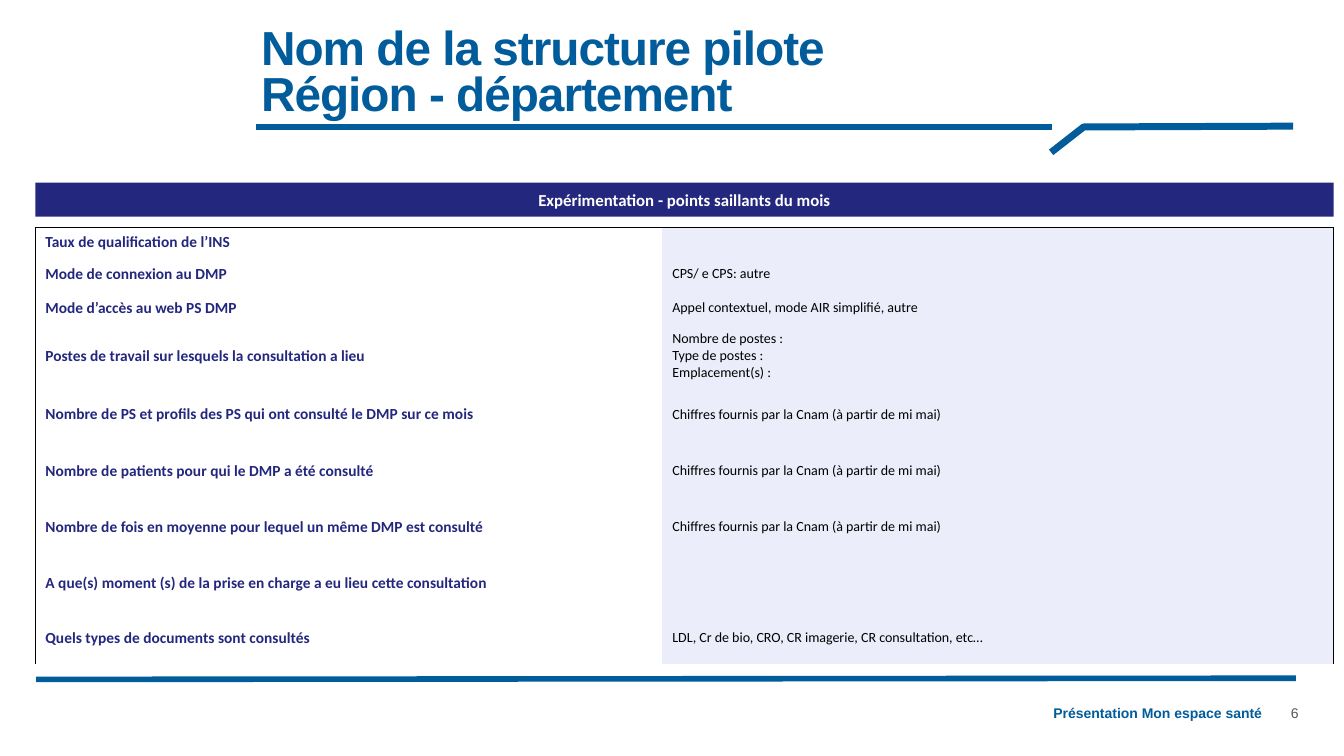
from dataclasses import dataclass

from lxml import etree
from pptx import Presentation
from pptx import util as u
from pptx.dml.color import RGBColor
from pptx.enum import shapes, text
from pptx.oxml import ns

HUES = {"blue": "005C9B", "navy": "23277E", "pale": "ECEDFA",
        "white": "FFFFFF", "black": "000000", "grey": "575757"}
PLAIN = "{2D5ABB26-0587-4C30-8999-92F81FD0307C}"  # table style without grid

# Format values: font attributes plus a colour name
TITLE = {"name": "Arial", "size": u.Pt(34.1), "bold": True, "hue": "blue"}
FOOT = {"name": "Arial", "size": u.Pt(10), "bold": True, "hue": "blue"}
PAGE = {"name": "Arial", "size": u.Pt(10), "bold": False, "hue": "grey"}
HEAD = {"name": "Calibri", "size": u.Pt(12), "bold": True, "hue": "white"}
LABEL = {"name": "Calibri", "size": u.Pt(11), "bold": True, "hue": "navy"}
VALUE = {"name": "Calibri", "size": u.Pt(10), "bold": False, "hue": "black"}


@dataclass
class Box:
    words: str
    left: float
    top: float
    width: float
    height: float
    style: dict
    align: text.PP_ALIGN = text.PP_ALIGN.LEFT
    anchor: text.MSO_ANCHOR = text.MSO_ANCHOR.TOP
    pad: float = 0.13
    side: float = 0.13
    gap: float = 1.0
    track: int = 0

    def place(self) -> list:
        return [u.Cm(n) for n in (self.left, self.top, self.width, self.height)]


@dataclass
class Rule:
    start: tuple
    end: tuple
    weight: float


@dataclass
class Row:
    label: str
    value: str
    height: float


def rgb(hue: str) -> RGBColor:
    return RGBColor.from_string(HUES[hue])


def style_font(font, style: dict) -> None:
    for key, val in style.items():
        if key == "hue":
            font.color.rgb = rgb(val)
        else:
            setattr(font, key, val)


def fill_text(frame, box: Box) -> None:
    props = {"word_wrap": True, "vertical_anchor": box.anchor,
             "margin_left": u.Cm(box.side), "margin_right": u.Cm(box.side),
             "margin_top": u.Cm(box.pad), "margin_bottom": u.Cm(box.pad)}
    for key, val in props.items():
        setattr(frame, key, val)
    para = frame.paragraphs[0]
    para.text = box.words
    para.alignment, para.line_spacing = box.align, box.gap
    for run in para.runs:
        style_font(run.font, box.style)
        if box.track:
            run._r.get_or_add_rPr().set("spc", str(box.track))


def draw_box(slide, box: Box) -> None:
    fill_text(slide.shapes.add_textbox(*box.place()).text_frame, box)


def draw_band(slide, box: Box) -> None:
    band = slide.shapes.add_shape(shapes.MSO_SHAPE.RECTANGLE, *box.place())
    band.shadow.inherit = False
    band.fill.solid()
    band.fill.fore_color.rgb = rgb("navy")
    band.line.fill.background()
    fill_text(band.text_frame, box)


def style_line(line, weight: float) -> None:
    line.color.rgb = rgb("blue")
    line.width = u.Pt(weight)


def draw_rule(slide, rule: Rule) -> None:
    ends = [u.Cm(n) for n in rule.start + rule.end]
    line = slide.shapes.add_connector(shapes.MSO_CONNECTOR.STRAIGHT, *ends)
    style_line(line.line, rule.weight)
    etree.SubElement(line._element.spPr, ns.qn("a:effectLst"))


def draw_bend(slide, points: list, weight: float) -> None:
    spots = [(u.Cm(x), u.Cm(y)) for x, y in points]
    path = slide.shapes.build_freeform(*spots[0])
    path.add_line_segments(spots[1:], close=False)
    bend = path.convert_to_shape()
    bend.shadow.inherit = False
    bend.fill.background()
    style_line(bend.line, weight)


def add_edge(cell, side: str) -> None:
    edge = etree.SubElement(cell._tc.get_or_add_tcPr(), ns.qn("a:ln" + side), w="12700")
    fill = etree.SubElement(edge, ns.qn("a:solidFill"))
    etree.SubElement(fill, ns.qn("a:srgbClr"), val=HUES["black"])


def fill_cell(cell, words: str, style: dict, sides: str) -> None:
    for side in sides:
        add_edge(cell, side)
    cell.vertical_anchor = text.MSO_ANCHOR.MIDDLE
    cell.text = words
    for para in cell.text_frame.paragraphs:
        for run in para.runs:
            style_font(run.font, style)
        if not words:  # keeps an empty row low
            etree.SubElement(para._p, ns.qn("a:endParaRPr"), sz="1000")


def draw_table(slide, rows: list, left: float, top: float, cols: tuple) -> None:
    total = sum(row.height for row in rows)
    frame = slide.shapes.add_table(len(rows), len(cols), u.Cm(left), u.Cm(top),
                                   u.Cm(sum(cols)), u.Cm(total))
    table = frame.table
    table.first_row = table.horz_banding = False
    table._tbl.tblPr.find(ns.qn("a:tableStyleId")).text = PLAIN
    for col, width in zip(table.columns, cols):
        col.width = u.Cm(width)
    for i, row in enumerate(rows):
        table.rows[i].height = u.Cm(row.height)
        lid = "" if i else "T"
        name, value = table.cell(i, 0), table.cell(i, 1)
        fill_cell(name, row.label, LABEL, "L" + lid)
        fill_cell(value, row.value, VALUE, "R" + lid)
        name.fill.background()
        value.fill.solid()
        value.fill.fore_color.rgb = rgb("pale")


CNAM = "Chiffres fournis par la Cnam (à partir de mi mai)"
ROWS = [
    Row("Taux de qualification de l’INS", "", 0.69),
    Row("Mode de connexion au DMP", "CPS/ e CPS: autre", 0.86),
    Row("Mode d’accès au web PS DMP", "Appel contextuel, mode AIR simplifié, autre", 0.86),
    Row("Postes de travail sur lesquels la consultation a lieu",
        "Nombre de postes :\nType de postes :\nEmplacement(s) :", 1.42),
    Row("Nombre de PS et profils des PS qui ont consulté le DMP sur ce mois", CNAM, 1.42),
    Row("Nombre de patients pour qui le DMP a été consulté", CNAM, 1.42),
    Row("Nombre de fois en moyenne pour lequel un même DMP est consulté", CNAM, 1.42),
    Row("A que(s) moment (s) de la prise en charge a eu lieu cette consultation", "", 1.42),
    Row("Quels types de documents sont consultés",
        "LDL, Cr de bio, CRO, CR imagerie, CR consultation, etc…", 1.32),
]
RULES = [Rule((6.45, 3.2), (26.52, 3.2), 5), Rule((0.91, 17.12), (32.66, 17.09), 4)]
BEND = [(26.49, 3.84), (27.31, 3.2), (32.59, 3.18)]
BAND = Box("Expérimentation - points saillants du mois", 0.89, 4.6, 32.72, 0.86, HEAD,
           text.PP_ALIGN.CENTER, text.MSO_ANCHOR.MIDDLE)
BOXES = [
    Box("Présentation Mon espace santé", 21.54, 17.63, 10.39, 0.89, FOOT,
        text.PP_ALIGN.RIGHT),
    Box("Nom de la structure pilote\vRégion - département", 6.43, 0.05, 17.3, 3.15, TITLE,
        anchor=text.MSO_ANCHOR.BOTTOM, pad=0.15, side=0.15, gap=0.8, track=-70),
    Box("6", 32.28, 17.63, 1.3, 0.66, PAGE, side=0.25),
]


def main() -> None:
    deck = Presentation()
    deck.slide_width, deck.slide_height = u.Cm(33.87), u.Cm(19.05)
    slide = deck.slides.add_slide(deck.slide_layouts[6])

    # Rules above and below the content
    for rule in RULES:
        draw_rule(slide, rule)
    draw_bend(slide, BEND, 5)

    # Band and table
    draw_band(slide, BAND)
    draw_table(slide, ROWS, 0.89, 5.74, (15.8, 16.92))

    # Title, footer and page number
    for box in BOXES:
        draw_box(slide, box)
    deck.save("out.pptx")


if __name__ == "__main__":
    main()
